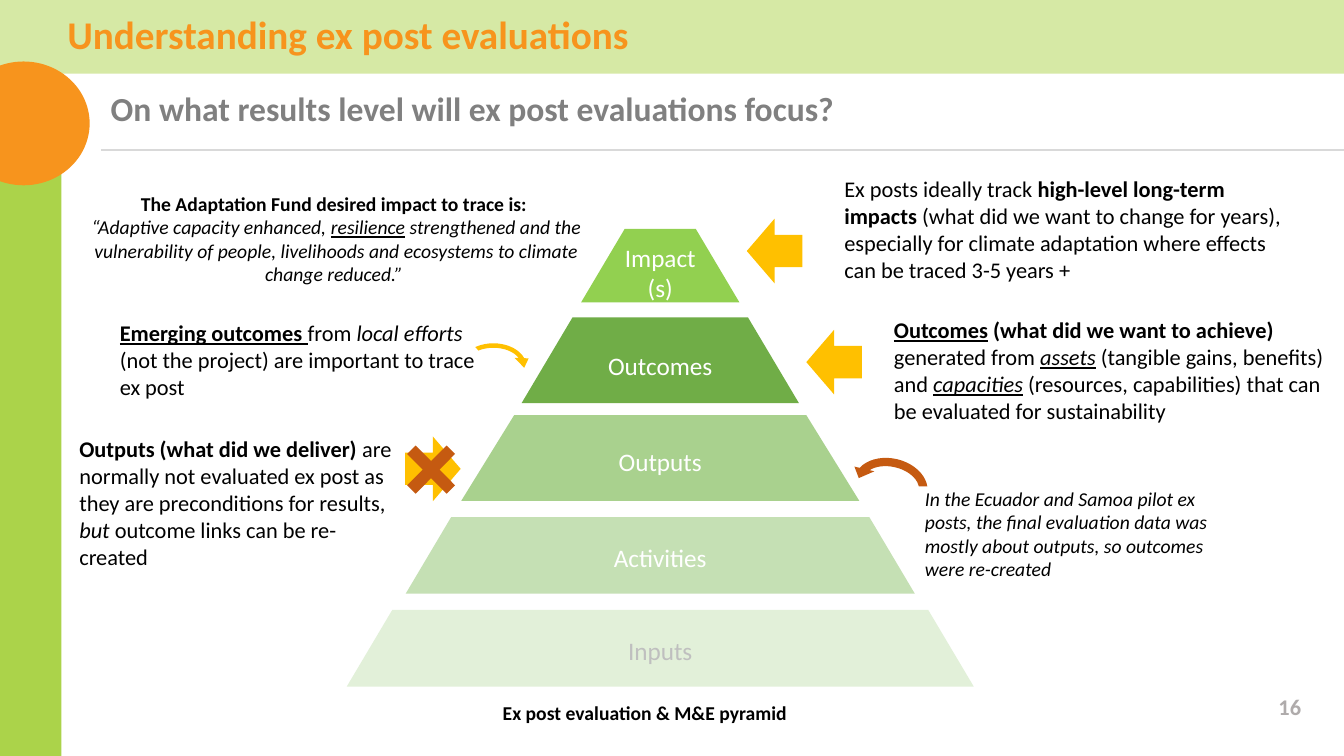
from pptx import Presentation
from pptx.dml.color import RGBColor
from pptx.enum.shapes import MSO_CONNECTOR, MSO_SHAPE as Shape
from pptx.enum.text import MSO_ANCHOR as Anchor, PP_ALIGN as Align
from pptx.util import Cm, Pt
from lxml.etree import SubElement
from pptx.oxml.ns import qn

# Colours
BLACK = RGBColor(0x00, 0x00, 0x00)
WHITE = RGBColor(0xFF, 0xFF, 0xFF)
ORANGE = RGBColor(0xF7, 0x94, 0x1D)
AMBER = RGBColor(0xFF, 0xC0, 0x00)
RUST = RGBColor(0xC5, 0x5A, 0x11)
LIME = RGBColor(0xAB, 0xD3, 0x4A)
PALE_LIME = RGBColor(0xD6, 0xE9, 0xA5)
GREY = RGBColor(0x80, 0x80, 0x80)
NUMBER_GREY = RGBColor(0xAF, 0xAB, 0xAB)
INPUT_GREY = RGBColor(0xBF, 0xBF, 0xBF)
RULE_GREY = RGBColor(0xD9, 0xD9, 0xD9)

# Content: lengths in centimetres
SLIDE_WIDTH, SLIDE_HEIGHT = 33.87, 19.05
FONT = "Calibri"
PYRAMID_CENTRE = 16.64

# label, top, width, height, slope, fill, text colour
LEVELS = [
    ("Outcomes", 8.0, 6.99, 2.16, 0.594, RGBColor(0x70, 0xAD, 0x47), WHITE),
    ("Outputs", 10.46, 10.03, 2.16, 0.618, RGBColor(0xA9, 0xD1, 0x8E), WHITE),
    ("Activities", 13.03, 12.83, 1.93, 0.594, RGBColor(0xC5, 0xE0, 0xB4), WHITE),
    ("Inputs", 15.37, 15.8, 1.93, 0.594, RGBColor(0xE2, 0xF0, 0xD9), INPUT_GREY),
    ("Impact (s)", 5.77, 3.99, 1.85, 0.594, RGBColor(0x92, 0xD0, 0x50), WHITE),
]

# left, top, rotation
BLOCK_ARROWS = [(10.21, 11.0, 0), (20.32, 8.31, 180), (18.82, 5.51, 180)]

# Headings: place, format, colour, paragraphs of (text, style) spans
HEADINGS = [
    ((30.73, 17.3, 2.31, 1.02), {"alignment": Align.RIGHT}, 16, NUMBER_GREY, [[("16", "b")]]),
    ((2.54, 2.21, 31.32, 1.17), {"line_spacing": 0.9}, 24, GREY,
     [[("On what results level will ex post evaluations focus?", "b")]]),
    ((1.45, 0.28, 26.77, 1.63), {"line_spacing": 0.9}, 28, ORANGE,
     [[("Understanding ex post evaluations", "b")]]),
]

# Notes: styles are any of b (bold), i (italic), u (underline)
NOTES = [
    ((1.91, 4.7, 13.13, 2.64), {"alignment": Align.CENTER}, 14, BLACK, [
        [("The Adaptation Fund desired impact to trace is: ", "b")],
        [("“Adaptive capacity enhanced, ", "i"), ("resilience", "iu"),
         (" strengthened and the vulnerability of people, livelihoods and "
          "ecosystems to climate change reduced.” ", "i")]]),
    ((21.03, 4.29, 12.04, 3.0), {}, 16, BLACK, [
        [("Ex posts ideally track ", ""), ("high-level long-term impacts", "b"),
         (" (what did we want to change for years), especially for climate "
          "adaptation where effects can be traced 3-5 years +", "")]]),
    ((22.28, 7.85, 11.58, 3.68), {}, 16, BLACK, [
        [("Outcomes", "bu"), (" (what did we want to achieve) ", "b"),
         ("generated from ", ""), ("assets", "iu"),
         (" (tangible gains, benefits) and ", ""), ("capacities", "iu"),
         (" (resources, capabilities) that can be evaluated for sustainability", "")]]),
    ((2.77, 7.92, 9.83, 2.31), {}, 16, BLACK, [
        [("Emerging outcomes ", "bu"), ("from ", ""), ("local efforts", "i"),
         (" (not the project) are important to trace ex post", "")]]),
    ((1.75, 10.85, 8.64, 3.68), {}, 16, BLACK, [
        [("Outputs (what did we deliver)", "b"),
         (" are normally not evaluated ex post as they are preconditions for results, ", ""),
         ("but ", "i"), ("outcome links can be re-created", "")]]),
    ((23.06, 12.14, 7.72, 2.64), {}, 14, BLACK, [
        [("In the Ecuador and Samoa pilot ex posts, the final evaluation data "
          "was mostly about outputs, so outcomes were re-created", "i")]]),
    ((12.42, 17.55, 9.09, 0.86), {}, 14, BLACK, [
        [("Ex post evaluation & M&E pyramid", "b")]]),
]


def set_all(target, values):
    for name, value in values.items():
        setattr(target, name, value)


def write(frame, paragraphs, size, colour, layout):
    frame.word_wrap = True
    for index, spans in enumerate(paragraphs):
        para = frame.add_paragraph() if index else frame.paragraphs[0]
        set_all(para, layout)
        for text, style in spans:
            span = para.add_run()
            span.text = text
            set_all(span.font, {"name": FONT, "size": Pt(size), "bold": "b" in style,
                                "italic": "i" in style, "underline": "u" in style})
            span.font.color.rgb = colour


def add_text(page, place, layout, size, colour, paragraphs):
    box = page.shapes.add_textbox(*map(Cm, place))
    write(box.text_frame, paragraphs, size, colour, layout)
    return box


def add_filled(page, kind, place, fill, adjustments=(), rotation=0):
    shape = page.shapes.add_shape(kind, *map(Cm, place))
    shape.shadow.inherit = False
    shape.fill.solid()
    shape.fill.fore_color.rgb = fill
    shape.line.fill.background()
    shape.rotation = rotation
    for index, value in enumerate(adjustments):
        shape.adjustments[index] = value
    return shape


deck = Presentation()
deck.slide_width, deck.slide_height = Cm(SLIDE_WIDTH), Cm(SLIDE_HEIGHT)
page = deck.slides.add_slide(deck.slide_layouts[6])

# Frame and headings
add_filled(page, Shape.RECTANGLE, (0, 0, 1.55, SLIDE_HEIGHT), LIME)
add_filled(page, Shape.RECTANGLE, (0, 0, SLIDE_WIDTH, 1.86), PALE_LIME)
add_filled(page, Shape.OVAL, (-1.07, 1.55, 3.33, 3.12), ORANGE)
page_number, *_ = [add_text(page, *heading) for heading in HEADINGS]
page_number.text_frame.vertical_anchor = Anchor.MIDDLE

rule = page.shapes.add_connector(
    MSO_CONNECTOR.STRAIGHT, Cm(2.54), Cm(3.78), Cm(SLIDE_WIDTH), Cm(3.78))
rule.line.color.rgb = RULE_GREY
rule.line.width = Pt(1.5)
SubElement(rule._element.spPr, qn("a:effectLst"))

# Pyramid, every level centred on one axis
for label, top, width, height, slope, fill, colour in LEVELS:
    place = (PYRAMID_CENTRE - width / 2, top, width, height)
    level = add_filled(page, Shape.TRAPEZOID, place, fill, [slope])
    level.text_frame.vertical_anchor = Anchor.MIDDLE
    write(level.text_frame, [[(label, "")]], 18, colour, {"alignment": Align.CENTER})

# Block arrows
for left, top, rotation in BLOCK_ARROWS:
    add_filled(page, Shape.RIGHT_ARROW, (left, top, 1.4, 1.63), AMBER, rotation=rotation)

# Notes
for note in NOTES:
    add_text(page, *note)

# Curved arrows and cross
add_filled(page, Shape.CIRCULAR_ARROW, (11.48, 8.53, 1.91, 1.42), AMBER,
           [0.079, 11.423, 205.895, 136.287, 0.125])
add_filled(page, Shape.MATH_MULTIPLY, (9.91, 10.87, 1.91, 1.93), RUST, [0.158])
pilot_arrow = add_filled(page, Shape.CIRCULAR_ARROW, (21.36, 11.4, 2.18, 1.68), RUST,
                         [0.125, 11.423, 204.577, 115.224, 0.154], 193.3)
pilot_arrow._element.spPr.xfrm.set("flipV", "1")

deck.save("out.pptx")
